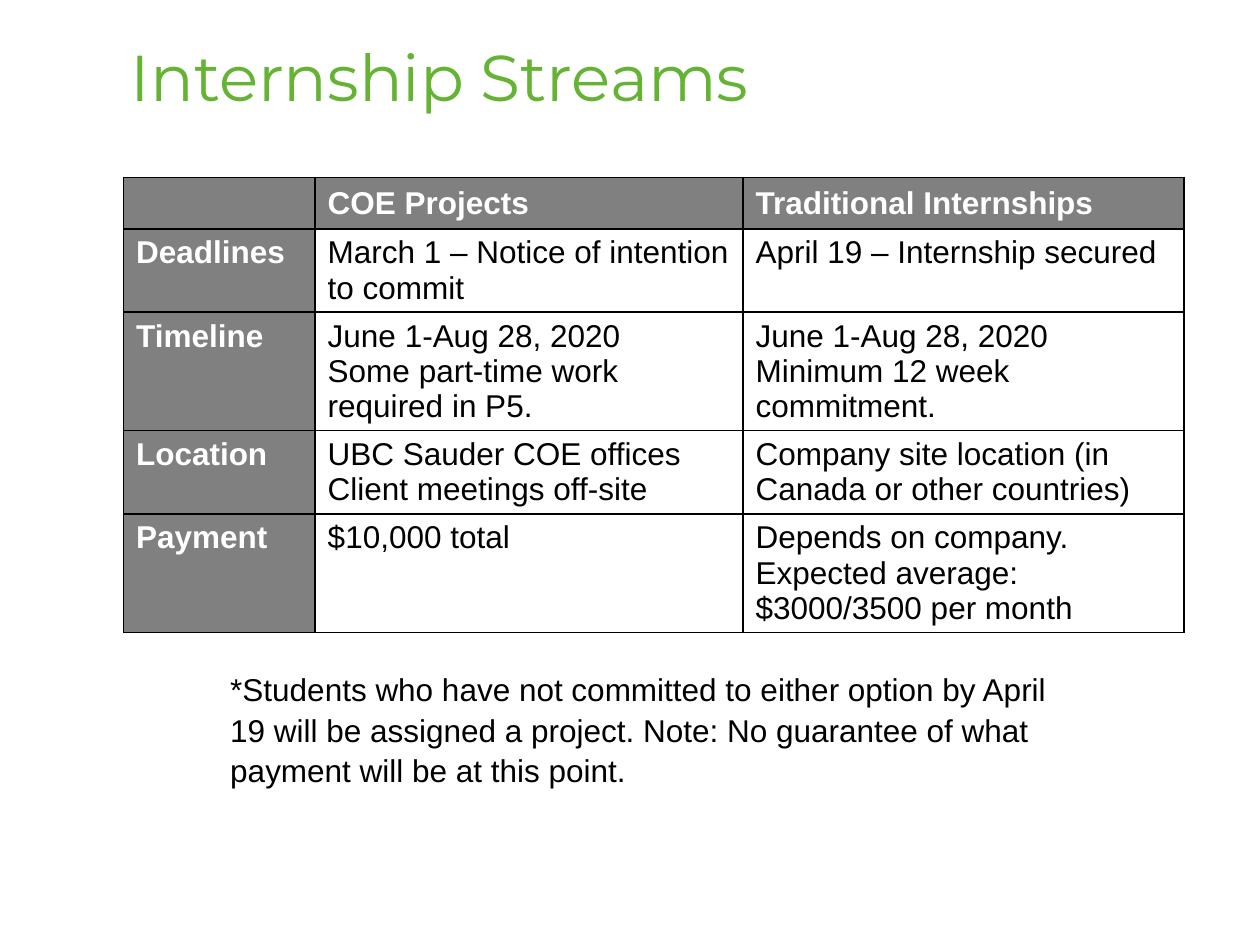
"""Build the Internship Streams slide with its comparison table."""
from dataclasses import dataclass

from lxml import etree
from pptx import Presentation
from pptx import util as u
from pptx.dml import color
from pptx.enum import text
from pptx.oxml import ns

GREEN, GRAY, BLACK, WHITE = "65B333", "808080", "000000", "FFFFFF"
COLUMN_WIDTHS = (109.5, 244.5, 252)


@dataclass
class Row:
    height: float
    label: str
    project: str
    traditional: str


@dataclass
class Note:
    wording: str
    left: float
    top: float
    width: float
    height: float
    size: float
    font: str
    hue: str
    margins: tuple[float, float, float, float]
    spacing: float = 1.0


ROWS = (
    Row(29.5, "", "COE Projects", "Traditional Internships"),
    Row(47.4, "Deadlines", "March 1 – Notice of intention to commit",
        "April 19 – Internship secured"),
    Row(67.6, "Timeline",
        "June 1-Aug 28, 2020\nSome part-time work required in P5.",
        "June 1-Aug 28, 2020\nMinimum 12 week commitment."),
    Row(47.4, "Location", "UBC Sauder COE offices\nClient meetings off-site",
        "Company site location (in Canada or other countries)"),
    Row(67.6, "Payment", "$10,000 total",
        "Depends on company.\nExpected average: $3000/3500 per month"),
)

NOTES = (
    Note("*Students who have not committed to either option by April 19 will be "
         "assigned a project. Note: No guarantee of what payment will be at this point.",
         124.5, 378, 498, 72.7, 18, "Arial", BLACK, (7.2, 3.6, 7.2, 3.6), 1.07),
    Note("Internship Streams", 67.7, 20.9, 468, 41.8, 37, "Montserrat", GREEN,
         (7.2, 0, 0, 0)),
)


def rgb(value: str) -> color.RGBColor:
    return color.RGBColor.from_string(value)


def style_text(frame, size: float, font: str, hue: str, bold: bool = False) -> None:
    for para in frame.paragraphs:
        for span in para.runs:
            span.font.size = u.Pt(size)
            span.font.name = font
            span.font.bold = bold
            span.font.color.rgb = rgb(hue)


def add_borders(cell) -> None:
    properties = cell._tc.get_or_add_tcPr()
    for side in ("a:lnL", "a:lnR", "a:lnT", "a:lnB"):
        line = etree.SubElement(properties, ns.qn(side), w=str(u.Pt(1)))
        fill = etree.SubElement(line, ns.qn("a:solidFill"))
        etree.SubElement(fill, ns.qn("a:srgbClr"), val=BLACK)


def fill_cell(cell, wording: str, heading: bool) -> None:
    cell.text_frame.text = wording
    style_text(cell.text_frame, 18, "Arial", WHITE if heading else BLACK, heading)
    add_borders(cell)
    if heading:
        cell.fill.solid()
        cell.fill.fore_color.rgb = rgb(GRAY)
    else:
        cell.fill.background()


def add_streams_table(page) -> None:
    width, height = sum(COLUMN_WIDTHS), sum(row.height for row in ROWS)
    table = page.shapes.add_table(len(ROWS), len(COLUMN_WIDTHS), u.Pt(70.6), u.Pt(101.4),
                                  u.Pt(width), u.Pt(height)).table
    table.first_row = table.horz_banding = False
    for column, column_width in zip(table.columns, COLUMN_WIDTHS):
        column.width = u.Pt(column_width)
    for i, row in enumerate(ROWS):
        table.rows[i].height = u.Pt(row.height)
        for j, wording in enumerate((row.label, row.project, row.traditional)):
            cell = table.cell(i, j)
            fill_cell(cell, wording, heading=i == 0 or j == 0)
            if i == 0:
                cell.vertical_anchor = text.MSO_ANCHOR.MIDDLE
    table.cell(0, 0).text_frame.paragraphs[0].font.size = u.Pt(18)


def add_note(page, note: Note) -> None:
    box = page.shapes.add_textbox(u.Pt(note.left), u.Pt(note.top),
                                  u.Pt(note.width), u.Pt(note.height))
    frame = box.text_frame
    frame.word_wrap = True
    (frame.margin_left, frame.margin_top,
     frame.margin_right, frame.margin_bottom) = map(u.Pt, note.margins)
    frame.text = note.wording
    frame.paragraphs[0].line_spacing = note.spacing
    style_text(frame, note.size, note.font, note.hue)


def main() -> None:
    deck = Presentation()
    deck.slide_width, deck.slide_height = u.Pt(720), u.Pt(540)
    page = deck.slides.add_slide(deck.slide_layouts[6])
    add_streams_table(page)
    for note in NOTES:
        add_note(page, note)
    deck.save("out.pptx")


if __name__ == "__main__":
    main()
